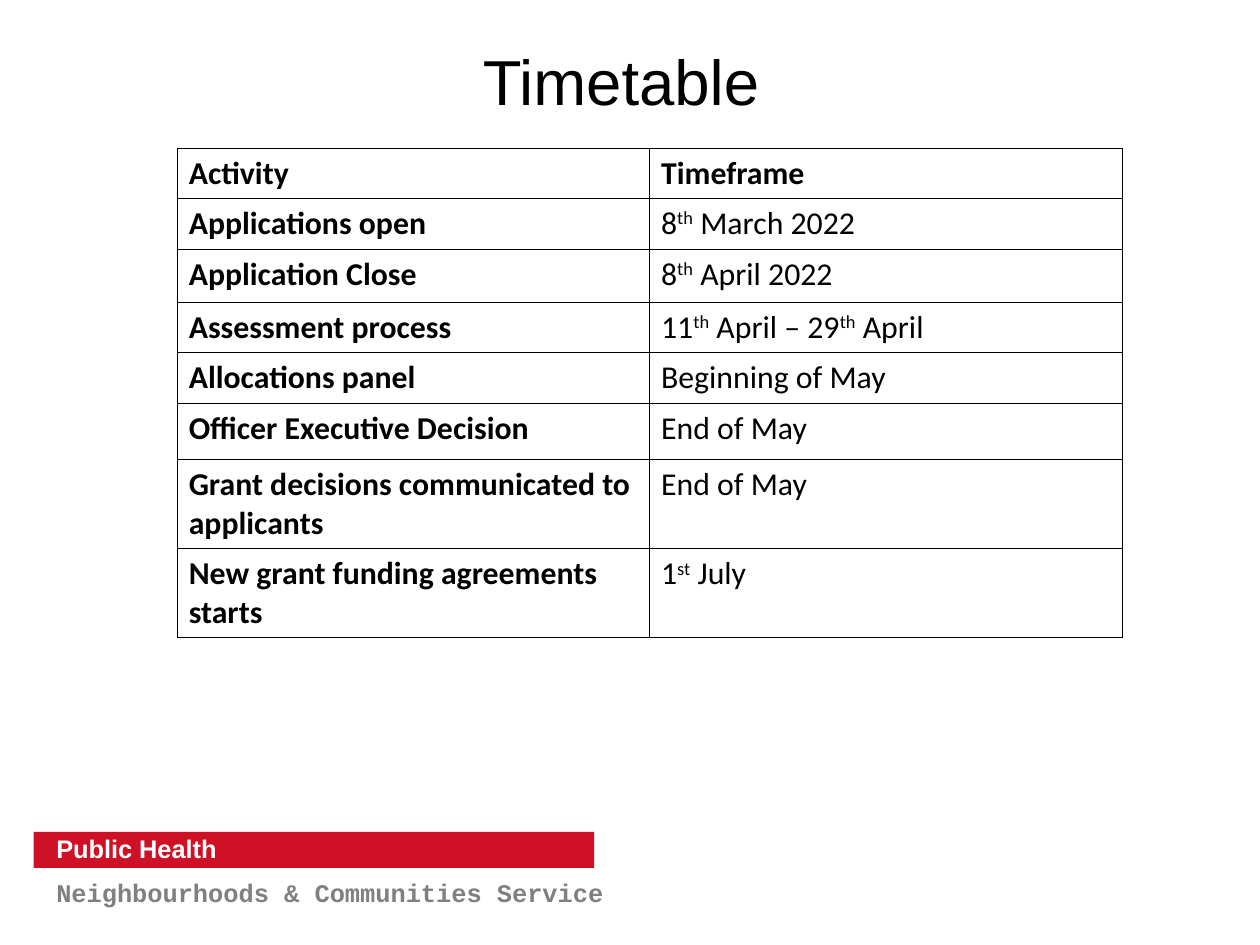
import pptx
import pptx.util
import pptx.dml.color
import pptx.enum.shapes
import pptx.enum.text
import pptx.oxml
from pptx.oxml.ns import nsdecls

Pt = pptx.util.Pt
RGB = pptx.dml.color.RGBColor
ANCHOR = pptx.enum.text.MSO_ANCHOR
ALIGN = pptx.enum.text.PP_ALIGN

# Content: text between carets is superscript
TITLE = "Timetable "
SERVICE = "Public Health"
DIRECTORATE = "Neighbourhoods & Communities Service"
TIMETABLE = [  # activity, timeframe, row height
    ("Activity ", "Timeframe ", 31.6),
    ("Applications open  ", "8^th^ March 2022 ", 32),
    ("Application Close  ", "8^th^ April 2022 ", 33.4),
    ("Assessment process ", "11^th^ April – 29^th^ April ", 31.6),
    ("Allocations panel  ", "Beginning of May  ", 32),
    ("Officer Executive Decision", "End of May  ", 35.4),
    ("Grant decisions communicated to applicants ", "End of May  ", 56.4),
    ("New grant funding agreements starts ", "1^st^ July  ", 56),
]
COL_WIDTH = 297.6
FOOTER_LEFT = 21.25

BLACK = RGB(0x00, 0x00, 0x00)
WHITE = RGB(0xFF, 0xFF, 0xFF)
GREY = RGB(0x80, 0x80, 0x80)
RED = RGB(0xCE, 0x11, 0x26)


def write(tf, text, font, size, color, bold=False, spacing=1.0, align=ALIGN.LEFT):
    tf.word_wrap = True
    p = tf.paragraphs[0]
    p.alignment = align
    p.line_spacing = spacing
    p.font.name, p.font.size, p.font.bold = font, Pt(size), bold
    p.font.color.rgb = color
    for i, part in enumerate(text.split("^")):
        r = p.add_run()
        r.text = part
        if i % 2:
            r._r.get_or_add_rPr().set("baseline", "30000")


def set_insets(tf, left, anchor):
    tf.margin_left = Pt(left)
    tf.margin_top = tf.margin_right = tf.margin_bottom = 0
    tf.vertical_anchor = anchor


def add_borders(cell):
    tcPr = cell._tc.get_or_add_tcPr()
    for i, side in enumerate(("lnL", "lnR", "lnT", "lnB")):
        tcPr.insert(i, pptx.oxml.parse_xml(
            f'<a:{side} {nsdecls("a")} w="{Pt(0.5)}"><a:solidFill>'
            f'<a:srgbClr val="{BLACK}"/></a:solidFill></a:{side}>'))


prs = pptx.Presentation()
prs.slide_width, prs.slide_height = Pt(793.75), Pt(595.25)
s = prs.slides.add_slide(prs.slide_layouts[6])

# Footer band and directorate name
band = s.shapes.add_shape(pptx.enum.shapes.MSO_SHAPE.ROUNDED_RECTANGLE,
                          Pt(FOOTER_LEFT), Pt(524), Pt(353), Pt(22.6))
band.adjustments[0] = 0
band.shadow.inherit = False
band.fill.solid()
band.fill.fore_color.rgb = RED
band.line.fill.background()
set_insets(band.text_frame, 14.2, ANCHOR.MIDDLE)
write(band.text_frame, SERVICE, "Arial", 16, WHITE, bold=True, spacing=0.93)

directorate = s.shapes.add_textbox(Pt(FOOTER_LEFT), Pt(552.6), Pt(389.5), Pt(28))
set_insets(directorate.text_frame, 14.2, ANCHOR.TOP)
write(directorate.text_frame, DIRECTORATE, "Courier New", 16, GREY, bold=True, spacing=1.01)

# Title
title = s.shapes.add_textbox(Pt(42.5), Pt(21.2), Pt(708.5), Pt(63.2))
set_insets(title.text_frame, 0, ANCHOR.MIDDLE)
write(title.text_frame, TITLE, "Arial", 40, BLACK, spacing=0.93, align=ALIGN.CENTER)

# Timetable
frame = s.shapes.add_table(len(TIMETABLE), 2, Pt(111.7), Pt(93.4), Pt(2 * COL_WIDTH),
                           Pt(sum(row[2] for row in TIMETABLE)))
table = frame.table
table.first_row = table.horz_banding = False
for col in table.columns:
    col.width = Pt(COL_WIDTH)
for i, (activity, timeframe, height) in enumerate(TIMETABLE):
    table.rows[i].height = Pt(height)
    for j, text in enumerate((activity, timeframe)):
        cell = table.cell(i, j)
        cell.fill.background()
        add_borders(cell)
        write(cell.text_frame, text, "Calibri", 20, BLACK, bold=(i == 0 or j == 0))

prs.save("out.pptx")
